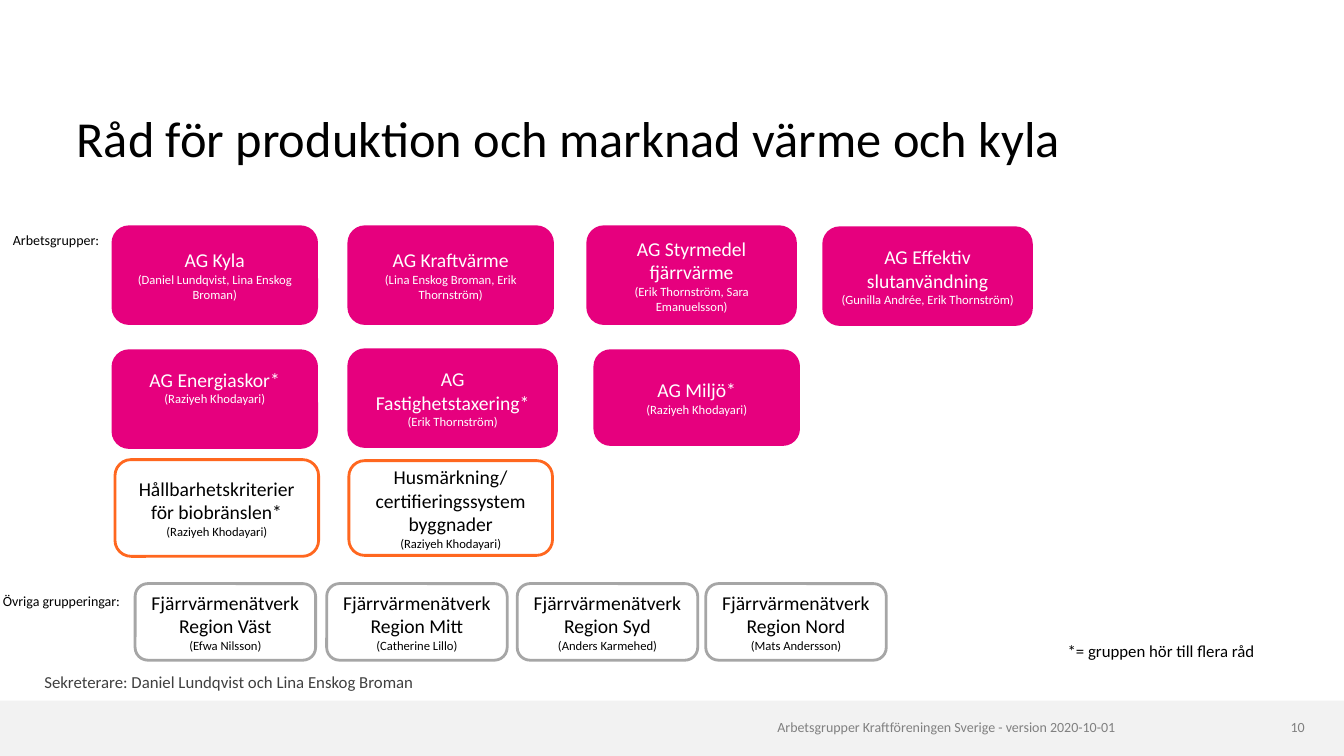
"""Build the slide of working groups for heating and cooling production."""
from dataclasses import dataclass
from typing import Optional

from pptx import Presentation
from pptx.dml.color import RGBColor
from pptx.enum.shapes import MSO_SHAPE
from pptx.enum.text import MSO_ANCHOR, PP_ALIGN
from pptx.util import Inches, Pt

ROUNDED, RECTANGLE = MSO_SHAPE.ROUNDED_RECTANGLE, MSO_SHAPE.RECTANGLE
TOP, MIDDLE, BOTTOM = MSO_ANCHOR.TOP, MSO_ANCHOR.MIDDLE, MSO_ANCHOR.BOTTOM
LEFT, CENTER, RIGHT = PP_ALIGN.LEFT, PP_ALIGN.CENTER, PP_ALIGN.RIGHT
FONT = "Calibri"
WHITE = RGBColor(0xFF, 0xFF, 0xFF)
BLACK = RGBColor(0x00, 0x00, 0x00)
PINK = RGBColor(0xE6, 0x00, 0x7E)
ORANGE = RGBColor(0xFF, 0x67, 0x1F)
SILVER = RGBColor(0xA6, 0xA6, 0xA6)
GREY = RGBColor(0x80, 0x80, 0x80)
CHARCOAL = RGBColor(0x40, 0x40, 0x40)
BAND = RGBColor(0xF2, 0xF2, 0xF2)


@dataclass(frozen=True)
class CardStyle:
    line: RGBColor
    text: RGBColor
    fill: Optional[RGBColor] = None


@dataclass(frozen=True)
class Card:
    name: str
    people: str
    left: float
    top: float
    width: float
    height: float
    style: CardStyle
    bottom_inset: float = 0.05


@dataclass(frozen=True)
class Label:
    text: str
    left: float
    top: float
    width: float
    height: float
    size: int
    color: RGBColor = BLACK
    align: PP_ALIGN = LEFT
    anchor: MSO_ANCHOR = TOP
    inset: float = 0
    spacing: float = 1.0
    wrap: bool = True


WORKING = CardStyle(PINK, WHITE, PINK)
TOPIC = CardStyle(ORANGE, BLACK)
NETWORK = CardStyle(SILVER, BLACK)

CARDS = [
    Card("AG Kyla", "Daniel Lundqvist, Lina Enskog Broman", 1.12, 2.25, 2.02, 0.96, WORKING),
    Card("AG Kraftvärme", "Lina Enskog Broman, Erik Thornström", 3.46, 2.25, 2.02, 0.96, WORKING),
    Card("AG Styrmedel fjärrvärme", "Erik Thornström, Sara Emanuelsson", 5.83, 2.25, 2.06, 0.96, WORKING),
    Card("AG Effektiv slutanvändning", "Gunilla Andrée, Erik Thornström", 8.17, 2.26, 2.06, 0.96, WORKING),
    Card("AG Energiaskor*", "Raziyeh Khodayari", 1.12, 3.48, 2.02, 0.96, WORKING, 0.29),
    Card("AG Fastighetstaxering*", "Erik Thornström", 3.46, 3.47, 2.06, 0.96, WORKING),
    Card("AG Miljö*", "Raziyeh Khodayari", 5.9, 3.48, 2.02, 0.93, WORKING),
    Card("Hållbarhetskriterier för biobränslen*", "Raziyeh Khodayari", 1.14, 4.56, 2.02, 0.96, TOPIC),
    Card("Husmärkning/ certifieringssystem byggnader", "Raziyeh Khodayari", 3.46, 4.57, 2.02, 0.94, TOPIC),
]
REGIONS = [
    ("Väst", "Efwa Nilsson", 1.34),
    ("Mitt", "Catherine Lillo", 3.24),
    ("Syd", "Anders Karmehed", 5.13),
    ("Nord", "Mats Andersson", 7.0),
]
LABELS = [
    Label("Arbetsgrupper Kraftföreningen Sverige - version 2020-10-01",
          2.2, 7.13, 8.86, 0.19, 10, GREY, RIGHT),
    Label("10", 12.55, 7.13, 0.39, 0.2, 10, GREY, RIGHT),
    Label("Sekreterare: Daniel Lundqvist och Lina Enskog Broman",
          0.44, 6.66, 4.86, 0.23, 12, CHARCOAL, anchor=MIDDLE, spacing=0.97),
    Label("Arbetsgrupper:", 0.03, 2.27, 1.21, 0.25, 10, inset=0.1, spacing=0.9),
    Label("Övriga grupperingar:", -0.07, 5.85, 1.41, 0.25, 10, inset=0.1, spacing=0.9),
    Label("*= gruppen hör till flera råd", 10.49, 6.33, 2.07, 0.28, 12,
          inset=0.1, spacing=0.9, wrap=False),
]


def add_run(paragraph, text: str, size: int, color: RGBColor) -> None:
    """Append one formatted run."""
    run = paragraph.add_run()
    run.text = text
    run.font.name = FONT
    run.font.size = Pt(size)
    run.font.color.rgb = color


def set_insets(frame, side: float, edge: float) -> None:
    """Set the horizontal and vertical insets of a text frame."""
    frame.margin_left = frame.margin_right = Inches(side)
    frame.margin_top = frame.margin_bottom = Inches(edge)


def fill_label(shape, label: Label) -> None:
    """Place a text shape and write its single paragraph."""
    shape.left, shape.top = Inches(label.left), Inches(label.top)
    shape.width, shape.height = Inches(label.width), Inches(label.height)
    frame = shape.text_frame
    frame.word_wrap = label.wrap
    frame.vertical_anchor = label.anchor
    set_insets(frame, label.inset, label.inset / 2)
    paragraph = frame.paragraphs[0]
    paragraph.alignment = label.align
    paragraph.line_spacing = label.spacing
    add_run(paragraph, label.text, label.size, label.color)


def add_label(slide, label: Label) -> None:
    """Add a free text box."""
    fill_label(slide.shapes.add_textbox(0, 0, 0, 0), label)


def add_card(slide, card: Card) -> None:
    """Add a rounded card with a group name and its contacts."""
    shape = slide.shapes.add_shape(ROUNDED, Inches(card.left), Inches(card.top),
                                   Inches(card.width), Inches(card.height))
    shape.shadow.inherit = False
    shape.line.color.rgb = card.style.line
    shape.line.width = Pt(2)
    if card.style.fill is None:
        shape.fill.background()
    else:
        shape.fill.solid()
        shape.fill.fore_color.rgb = card.style.fill
    frame = shape.text_frame
    frame.word_wrap = True
    frame.vertical_anchor = MIDDLE
    set_insets(frame, 0.1, 0.05)
    frame.margin_bottom = Inches(card.bottom_inset)
    name, people = frame.paragraphs[0], frame.add_paragraph()
    name.alignment = people.alignment = CENTER
    add_run(name, card.name, 14, card.style.text)
    add_run(people, f"({card.people})", 9, card.style.text)


def add_footer_band(slide) -> None:
    """Add the pale band along the bottom edge."""
    band = slide.shapes.add_shape(RECTANGLE, 0, Inches(6.95), Inches(13.33), Inches(0.55))
    band.shadow.inherit = False
    band.fill.solid()
    band.fill.fore_color.rgb = BAND
    band.line.fill.background()


def main() -> None:
    """Build and save the presentation."""
    presentation = Presentation()
    presentation.slide_width, presentation.slide_height = Inches(13.33), Inches(7.5)
    slide = presentation.slides.add_slide(presentation.slide_layouts[5])
    add_footer_band(slide)
    fill_label(slide.shapes.title, Label("Råd för produktion och marknad värme och kyla",
                                         0.76, 0.59, 9.8, 1.07, 36, anchor=BOTTOM, spacing=0.85))
    for label in LABELS:
        add_label(slide, label)
    networks = [Card(f"Fjärrvärmenätverk Region {region}", people, left, 5.79, 1.79, 0.76, NETWORK)
                for region, people, left in REGIONS]
    for card in CARDS + networks:
        add_card(slide, card)
    presentation.save("out.pptx")


if __name__ == "__main__":
    main()
